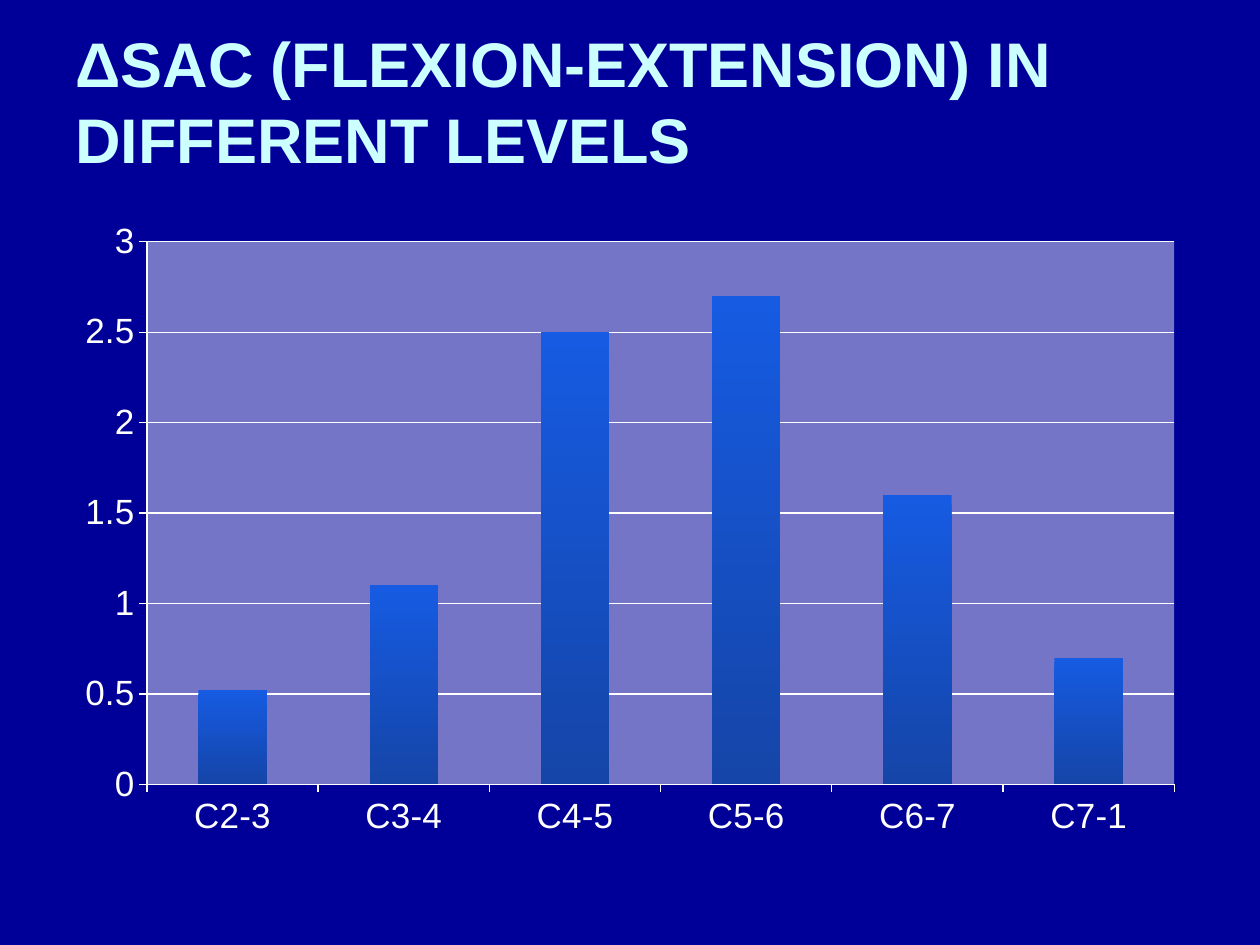
"""Build a slide with a column chart of ΔSAC by cervical level."""
from lxml import etree
from pptx import Presentation
from pptx.chart.data import CategoryChartData
from pptx.dml.color import RGBColor
from pptx.enum.chart import XL_CHART_TYPE, XL_TICK_MARK
from pptx.enum.text import MSO_ANCHOR
from pptx.oxml import parse_xml
from pptx.oxml.ns import nsdecls, qn
from pptx.util import Inches, Pt

COLUMNS = XL_CHART_TYPE.COLUMN_CLUSTERED
OUTSIDE = XL_TICK_MARK.OUTSIDE
MIDDLE = MSO_ANCHOR.MIDDLE

NAVY = RGBColor(0x00, 0x00, 0x99)
PALE_CYAN = RGBColor(0xCC, 0xFF, 0xFF)
WHITE = RGBColor(0xFF, 0xFF, 0xFF)
BAR_TOP = RGBColor(0x16, 0x5B, 0xE2)
BAR_BOTTOM = RGBColor(0x15, 0x45, 0xA8)
FONT = "Arial"

HEADING = "ΔSAC (FLEXION-EXTENSION) IN DIFFERENT LEVELS"
SAC_CHANGE = {"C2-3": 0.52, "C3-4": 1.1, "C4-5": 2.5,
              "C5-6": 2.7, "C6-7": 1.6, "C7-1": 0.7}
HEADING_BOX = (0.5, 0.17, 9, 1.25)
CHART_BOX = (0.5, 1.67, 9, 5.08)
PLOT_BOX = (1.17, 1.92, 8.15, 4.31)


def add_heading(slide):
    heading = slide.shapes.add_textbox(*map(Inches, HEADING_BOX))
    frame = heading.text_frame
    frame.word_wrap = True
    frame.vertical_anchor = MIDDLE
    frame.text = HEADING
    font = frame.paragraphs[0].runs[0].font
    font.name, font.size, font.bold = FONT, Pt(36), True
    font.color.rgb = PALE_CYAN


def style_plot_area(chart):
    left, top, width, height = CHART_BOX
    plot_left, plot_top, plot_width, plot_height = PLOT_BOX
    fractions = {"x": (plot_left - left) / width, "y": (plot_top - top) / height,
                 "w": plot_width / width, "h": plot_height / height}
    plot_area = chart._chartSpace.chart.plotArea
    for old_layout in plot_area.findall(qn("c:layout")):
        plot_area.remove(old_layout)
    layout = etree.Element(qn("c:layout"))
    manual = etree.SubElement(layout, qn("c:manualLayout"))
    settings = {"layoutTarget": "inner", "xMode": "edge", "yMode": "edge"}
    settings.update({key: f"{value:.3f}" for key, value in fractions.items()})
    for tag, value in settings.items():
        etree.SubElement(manual, qn(f"c:{tag}")).set("val", value)
    plot_area.insert(0, layout)
    plot_area.append(parse_xml(
        f'<c:spPr {nsdecls("c", "a")}><a:solidFill><a:srgbClr val="{WHITE}">'
        '<a:alpha val="46000"/></a:srgbClr></a:solidFill>'
        '<a:ln><a:noFill/></a:ln></c:spPr>'))


def add_sac_chart(slide):
    levels = CategoryChartData()
    levels.categories = list(SAC_CHANGE)
    levels.add_series("Series 1", list(SAC_CHANGE.values()))
    chart = slide.shapes.add_chart(COLUMNS, *map(Inches, CHART_BOX), levels).chart
    chart.has_legend = False
    chart.has_title = False
    chart.font.name, chart.font.size = FONT, Pt(10)
    chart.font.color.rgb = WHITE

    for axis in (chart.category_axis, chart.value_axis):
        axis.major_tick_mark = OUTSIDE
        axis.format.line.color.rgb = WHITE
        labels = axis.tick_labels.font
        labels.name, labels.size = FONT, Pt(20)
        labels.color.rgb = WHITE
    scale = chart.value_axis
    scale.minimum_scale, scale.maximum_scale, scale.major_unit = 0, 3, 0.5
    scale.has_major_gridlines = True
    scale.major_gridlines.format.line.color.rgb = WHITE

    bars = chart.plots[0]
    bars.vary_by_categories = False
    bars.gap_width = 150
    fill = bars.series[0].format.fill
    fill.gradient()
    fill.gradient_angle = 270
    for stop, color in zip(fill.gradient_stops, (BAR_TOP, BAR_BOTTOM)):
        stop.color.rgb = color
    style_plot_area(chart)


def main():
    deck = Presentation()
    deck.slide_width, deck.slide_height = Inches(10), Inches(7.5)
    slide = deck.slides.add_slide(deck.slide_layouts[6])
    slide.background.fill.solid()
    slide.background.fill.fore_color.rgb = NAVY
    add_heading(slide)
    add_sac_chart(slide)
    deck.save("out.pptx")


if __name__ == "__main__":
    main()
